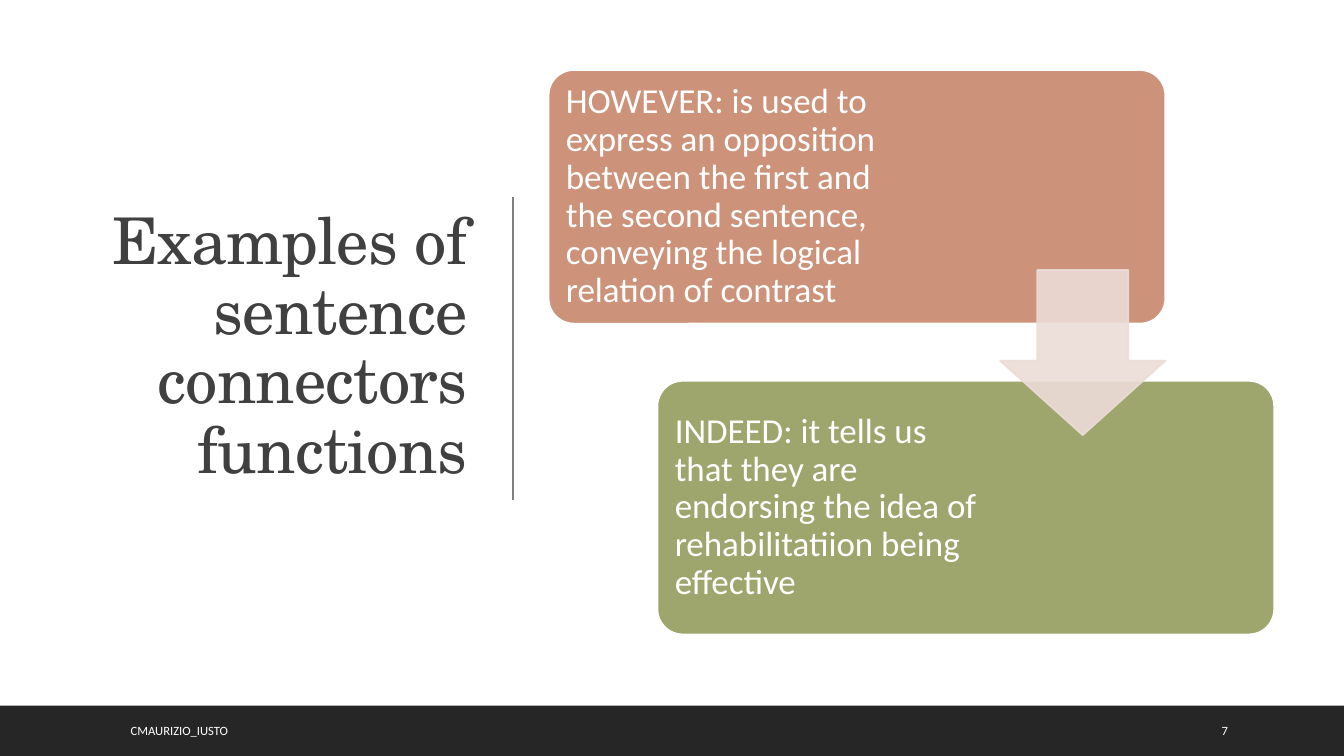
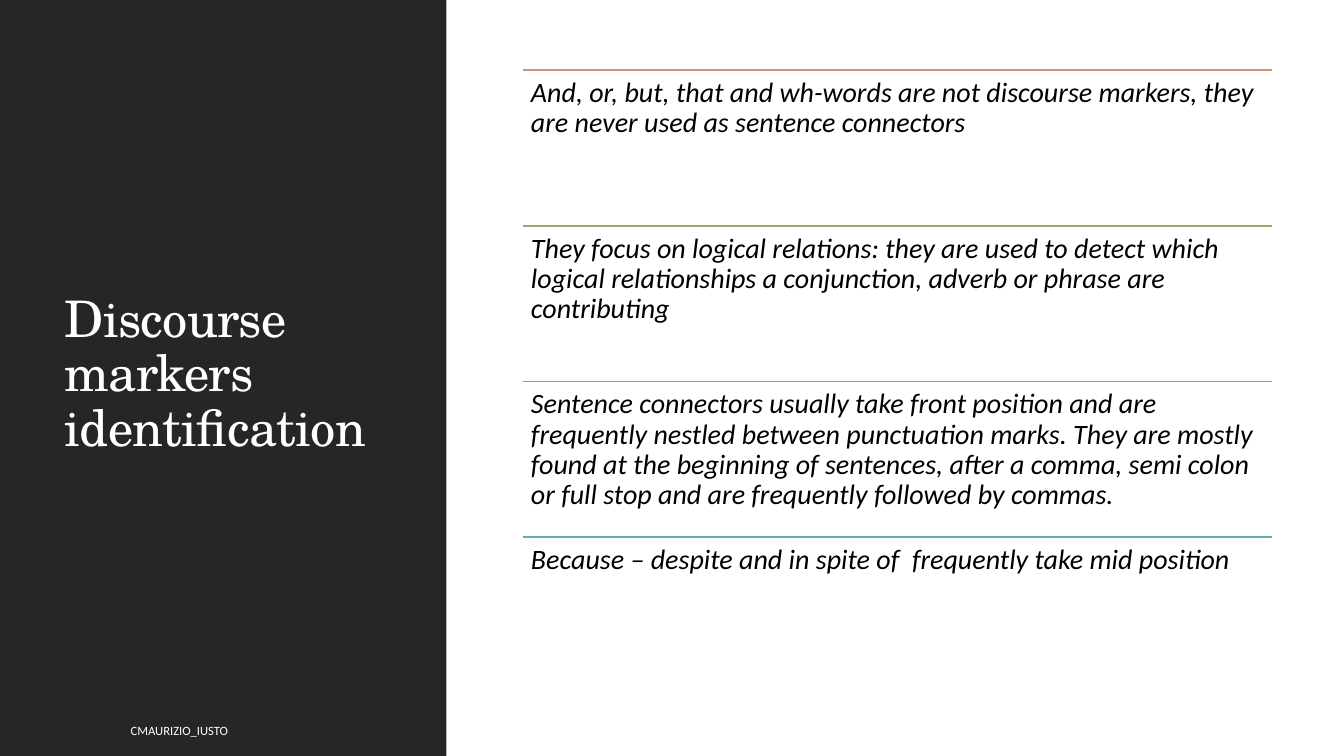
from dataclasses import dataclass

from lxml.etree import SubElement
from pptx import Presentation
from pptx.dml.color import RGBColor
from pptx.enum.shapes import MSO_CONNECTOR, MSO_SHAPE
from pptx.enum.text import MSO_ANCHOR, MSO_AUTO_SIZE, PP_ALIGN
from pptx.oxml.ns import qn
from pptx.util import Pt


@dataclass(frozen=True)
class Theme:
    heading: str = "TeX Gyre Schola"
    body: str = "Calibri"
    white: str = "FFFFFF"
    black: str = "000000"
    dark: str = "262626"
    title: str = "404040"
    divider: str = "808080"
    arrow: str = "ECDCD7"
    accents: tuple = ("CC937A", "9EA66D", "63AF9C", "67ABB8")
    title_size: float = 46
    panel_title_size: float = 36
    card_size: float = 25
    row_size: float = 20
    footer_size: float = 9
    line_width: float = 1.25


THEME = Theme()
WIDTH, HEIGHT = 960, 540
BAND_TOP, BAND_HEIGHT = 504, 36
FOOTER = "CMAURIZIO_IUSTO"
PAGE_NUMBER = "7"

CARDS = [
    ("HOWEVER: is used to express an opposition between the first and the second "
     "sentence, conveying the logical relation of contrast", 184.5),
    ("INDEED: it tells us that they are endorsing the idea of rehabilitatiion "
     "being effective", 203),
]
ROWS = [
    "And, or, but, that and wh-words are not discourse markers, they are never used "
    "as sentence connectors",
    "They focus on logical relations: they are used to detect which logical "
    "relationships a conjunction, adverb or phrase are contributing",
    "Sentence connectors usually take front position and are frequently nestled "
    "between punctuation marks. They are mostly found at the beginning of sentences, "
    "after a comma, semi colon or full stop and are frequently followed by commas.",
    "Because – despite and in spite of  frequently take mid position",
]


def rgb(color):
    return RGBColor.from_string(color)


def set_attributes(obj, values):
    for name, value in values.items():
        setattr(obj, name, value)


def set_alpha(color_format_parent, percent):
    for color in color_format_parent.iter(qn("a:srgbClr")):
        SubElement(color, qn("a:alpha")).set("val", str(percent * 1000))


def write_text(sp, text, size, color, font=THEME.body, italic=False,
               align=PP_ALIGN.LEFT, anchor=MSO_ANCHOR.MIDDLE, spacing=0.9,
               insets=(7.2, 3.6, 7.2, 3.6)):
    tf = sp.text_frame
    sides = ("margin_left", "margin_top", "margin_right", "margin_bottom")
    set_attributes(tf, {
        "word_wrap": True,
        "auto_size": MSO_AUTO_SIZE.NONE,
        "vertical_anchor": anchor,
        **{side: Pt(inset) for side, inset in zip(sides, insets)},
    })
    p = tf.paragraphs[0]
    set_attributes(p, {"alignment": align, "line_spacing": spacing})
    r = p.add_run()
    r.text = text
    set_attributes(r.font, {"name": font, "size": Pt(size), "italic": italic})
    r.font.color.rgb = rgb(color)
    return r


def add_title(slide, text, box, size, color, align=PP_ALIGN.LEFT):
    sp = slide.shapes.title
    set_attributes(sp, dict(zip(("left", "top", "width", "height"), map(Pt, box))))
    r = write_text(sp, text, size, color, font=THEME.heading, align=align)
    r.font._element.set("spc", "-50")


def add_text(slide, text, box, size, color, **options):
    sp = slide.shapes.add_textbox(*map(Pt, box))
    write_text(sp, text, size, color, **options)


def add_block(slide, kind, box, fill, line=None, adjustments=()):
    sp = slide.shapes.add_shape(kind, *map(Pt, box))
    sp.shadow.inherit = False
    sp.fill.solid()
    sp.fill.fore_color.rgb = rgb(fill)
    if line:
        sp.line.color.rgb = rgb(line)
        sp.line.width = Pt(THEME.line_width)
    else:
        sp.line.fill.background()
    for i, value in enumerate(adjustments):
        sp.adjustments[i] = value
    return sp


def add_line(slide, start, end, color, width=THEME.line_width):
    line = slide.shapes.add_connector(MSO_CONNECTOR.STRAIGHT, *map(Pt, start + end))
    line.line.color.rgb = rgb(color)
    line.line.width = Pt(width)
    SubElement(line._element.spPr, qn("a:effectLst"))


def add_footer(slide, text, left, width):
    add_text(slide, text, (left, 507.5, width, 29), THEME.footer_size, THEME.white,
             spacing=1)


def add_card(slide, box, text, color, right_inset):
    sp = add_block(slide, MSO_SHAPE.ROUNDED_RECTANGLE, box, color, THEME.white, [0.1])
    write_text(sp, text, THEME.card_size, THEME.white,
               insets=(7.2, 7.2, right_inset, 7.2))


def add_row(slide, left, top, width, height, text, color):
    add_line(slide, (left, top), (left + width, top), color)
    add_text(slide, text, (left, top, width, height), THEME.row_size, THEME.black,
             italic=True, anchor=MSO_ANCHOR.TOP, insets=(5.8,) * 4)


def build_functions(slide):
    add_title(slide, "Examples of sentence connectors functions",
              (50.4, 49.7, 290.2, 398), THEME.title_size, THEME.title, PP_ALIGN.RIGHT)
    add_line(slide, (366.5, 141), (366.5, 357), THEME.divider, 1)
    add_block(slide, MSO_SHAPE.RECTANGLE, (0, BAND_TOP, WIDTH, BAND_HEIGHT), THEME.dark)
    for i, (text, right_inset) in enumerate(CARDS):
        box = (391.8 + 77.8 * i, 50 + 222 * i, 440.6, 181.2)
        add_card(slide, box, text, THEME.accents[i], right_inset)
    arrow = add_block(slide, MSO_SHAPE.DOWN_ARROW, (714.4, 192.8, 118, 118),
                      THEME.arrow, THEME.arrow, [0.55, 0.45])
    set_alpha(arrow._element.spPr, 90)
    add_footer(slide, FOOTER, 86.2, 537)
    add_footer(slide, PAGE_NUMBER, 865.5, 61)


def build_identification(slide):
    add_block(slide, MSO_SHAPE.RECTANGLE, (0, 0, 318.8, HEIGHT), THEME.dark)
    title = slide.shapes.title._element
    title.getparent().append(title)
    add_title(slide, "Discourse markers identification",
              (39, 41, 242.6, 454.3), THEME.panel_title_size, THEME.white)
    pitch = 111.2
    for i, (text, color) in enumerate(zip(ROWS, THEME.accents)):
        add_row(slide, 373.5, 50.2 + pitch * i, 535, pitch, text, color)
    add_footer(slide, FOOTER, 86.2, 537)


def main():
    prs = Presentation()
    set_attributes(prs, {"slide_width": Pt(WIDTH), "slide_height": Pt(HEIGHT)})
    title_only = prs.slide_layouts.get_by_name("Title Only")
    for build in (build_functions, build_identification):
        build(prs.slides.add_slide(title_only))
    prs.save("out.pptx")


if __name__ == "__main__":
    main()
